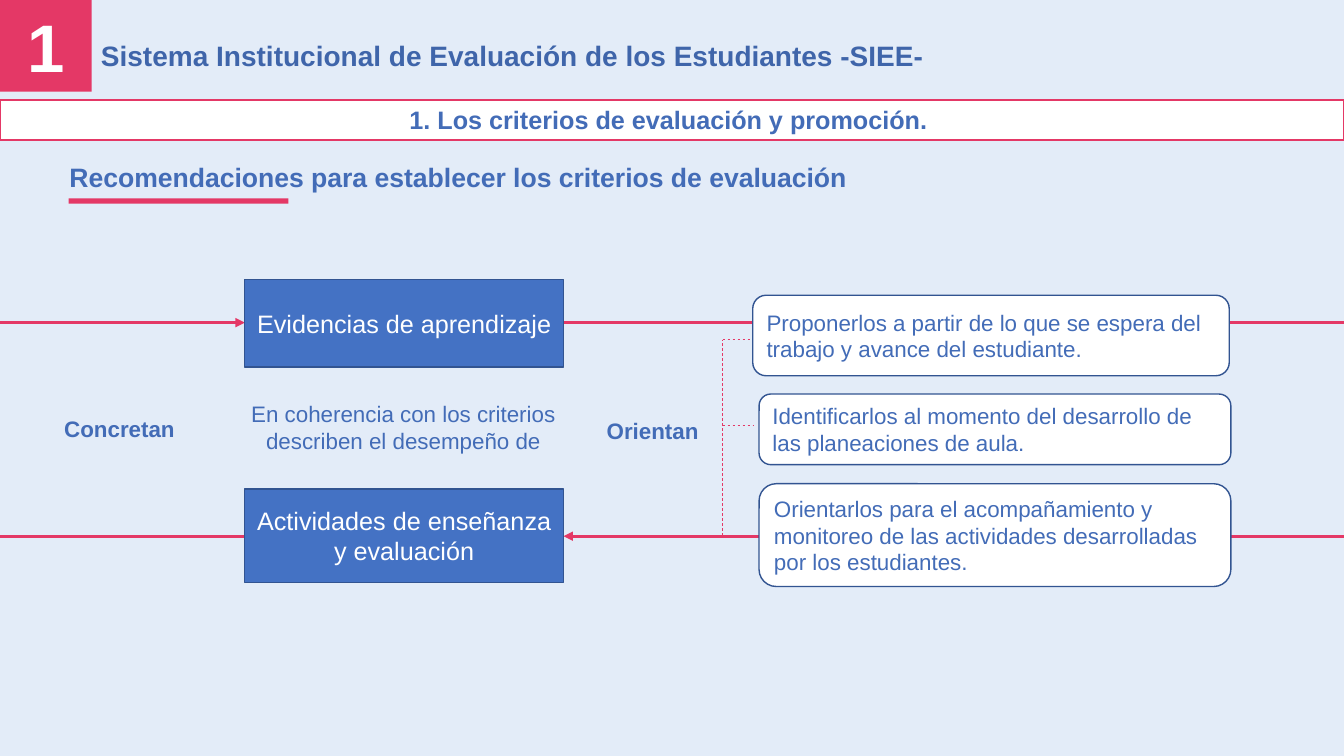
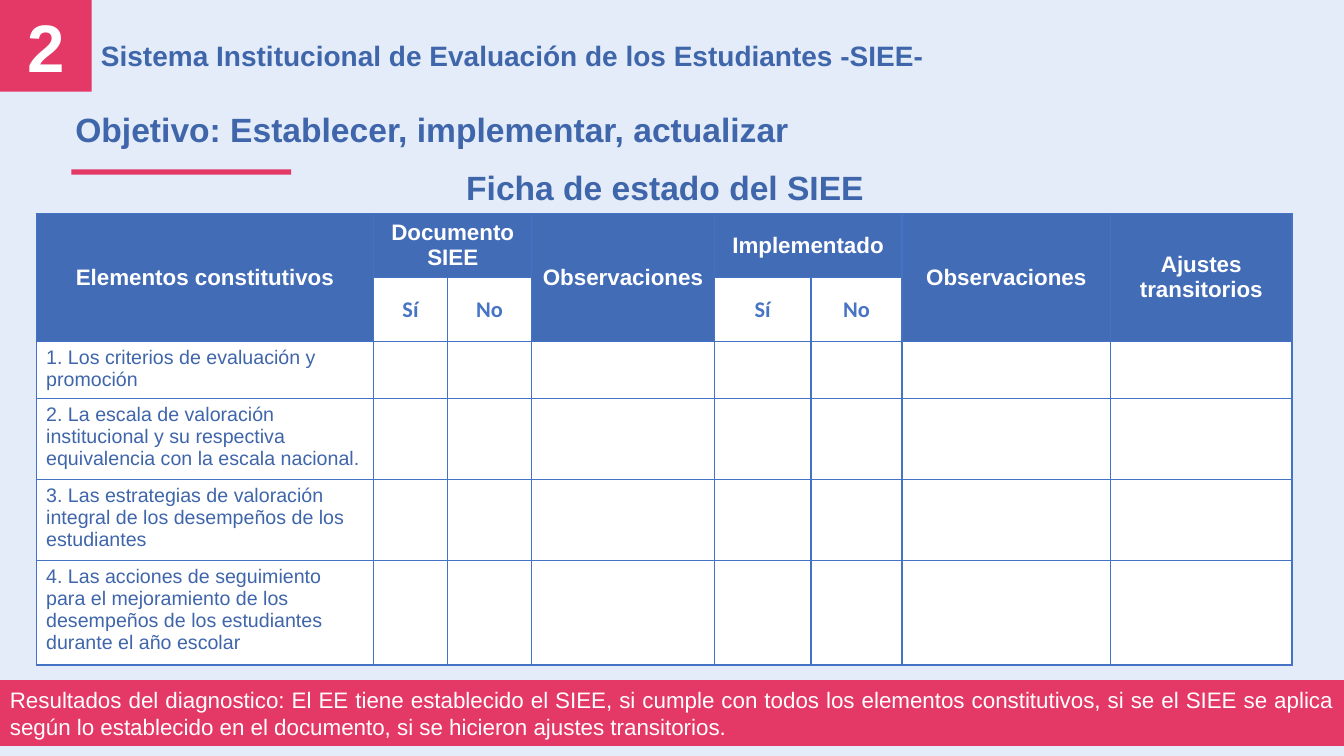
from lxml import etree
from pptx import Presentation
from pptx import util as u
from pptx.dml import color
from pptx.enum import dml, shapes, text
from pptx.oxml import ns

Cm = u.Cm
rgb = color.RGBColor.from_string
PINK, WHITE, SKY = "E43866", "FFFFFF", "E3ECF8"
BLUE, NAVY, TITLE, HEAD = "4472C4", "325491", "3F65AA", "436CB7"
LEFT, CENTER, JUSTIFY = text.PP_ALIGN.LEFT, text.PP_ALIGN.CENTER, text.PP_ALIGN.JUSTIFY
TOP, MIDDLE = text.MSO_ANCHOR.TOP, text.MSO_ANCHOR.MIDDLE
RECT, ROUND = shapes.MSO_SHAPE.RECTANGLE, shapes.MSO_SHAPE.ROUNDED_RECTANGLE
WIDTH, HEIGHT = 33.87, 19.05


def write(tf, lines, size, ink, bold=False, align=LEFT, font="Arial"):
    tf.word_wrap = True
    for i, line in enumerate(lines.split("\n")):
        p = tf.paragraphs[0] if i == 0 else tf.add_paragraph()
        p.alignment = align
        r = p.add_run()
        r.text = line
        r.font.name, r.font.size, r.font.bold = font, u.Pt(size), bold
        r.font.color.rgb = rgb(ink)


def add_block(s, box, kind=None, fill=None, line=None, weight=1, anchor=MIDDLE):
    box = [Cm(v) for v in box]
    if kind is None:
        sp = s.shapes.add_textbox(*box)
        sp.text_frame.vertical_anchor = TOP
        return sp.text_frame
    sp = s.shapes.add_shape(kind, *box)
    sp.shadow.inherit = False
    sp.fill.solid()
    sp.fill.fore_color.rgb = rgb(fill)
    if line:
        sp.line.color.rgb = rgb(line)
        sp.line.width = u.Pt(weight)
    else:
        sp.line.fill.background()
    sp.text_frame.vertical_anchor = anchor
    return sp.text_frame


prs = Presentation()
prs.slide_width, prs.slide_height = Cm(WIDTH), Cm(HEIGHT)
bg = prs.slide_master.background.fill
bg.solid()
bg.fore_color.rgb = rgb(SKY)

slides = []
for number, rule_x, rule_y in [("1", 1.73, 5), ("2", 1.8, 4.27)]:
    s = prs.slides.add_slide(prs.slide_layouts[5])
    title = s.shapes.title
    title.left, title.top, title.width, title.height = Cm(2.29), Cm(0.84), Cm(31.24), Cm(1.12)
    title.text_frame.auto_size = text.MSO_AUTO_SIZE.NONE
    title.text_frame.vertical_anchor = MIDDLE
    write(title.text_frame, "Sistema Institucional de Evaluación de los Estudiantes -SIEE-", 20, TITLE, True)
    write(add_block(s, (0, 0, 2.31, 2.31), RECT, PINK), number, 48, WHITE, True, CENTER)
    add_block(s, (rule_x, rule_y, 5.54, 0.13), RECT, PINK)
    slides.append(s)

s = slides[0]
tf = add_block(s, (0, 2.51, WIDTH, 1.02), RECT, WHITE, PINK, 1.5)
write(tf, "1. Los criterios de evaluación y promoción. ", 18, HEAD, True, CENTER)
tf = add_block(s, (1.5, 3.94, 20.4, 1.07))
write(tf, "Recomendaciones para establecer los criterios de evaluación", 19, HEAD, True)

upper, lower, trunk = 8.13, 13.51, 18.21
flows = [
    (0, upper, 6.17, upper, "arrow"),
    (6.17, lower, 0, lower, "plain"),
    (14.2, upper, WIDTH, upper, "plain"),
    (WIDTH, lower, 14.2, lower, "arrow"),
    (trunk, lower, trunk, 8.56, "dash"),
]
flows += [(trunk, y, 18.97, y, "dash") for y in (8.56, 10.72, lower)]
for x1, y1, x2, y2, style in flows:
    cn = s.shapes.add_connector(shapes.MSO_CONNECTOR.STRAIGHT, Cm(x1), Cm(y1), Cm(x2), Cm(y2))
    cn.line.color.rgb = rgb(PINK)
    cn.line.width = u.Pt(0.5 if style == "dash" else 2.25)
    if style == "dash":
        cn.line.dash_style = dml.MSO_LINE.DASH
    if style == "arrow":
        etree.SubElement(cn.line._get_or_add_ln(), ns.qn("a:tailEnd"), type="triangle")
    etree.SubElement(cn._element.spPr, ns.qn("a:effectLst"))

for top, height, words in [
    (7.04, 2.21, "Evidencias de aprendizaje"),
    (12.32, 2.36, "Actividades de enseñanza y evaluación"),
]:
    tf = add_block(s, (6.17, top, 8.03, height), RECT, BLUE, NAVY)
    write(tf, words, 18, WHITE, align=CENTER)

for box, words, bold, align in [
    ((5.87, 9.96, 8.59, 1.63), "En coherencia con los criterios\ndescriben el desempeño de", False, CENTER),
    ((15.04, 10.39, 4.19, 0.94), "Orientan", True, LEFT),
    ((1.37, 10.34, 4.27, 0.94), "Concretan", True, LEFT),
]:
    write(add_block(s, box), words, 16, HEAD, bold, align)

for box, words in [
    ((18.97, 7.44, 12.01, 2.03), "Proponerlos a partir de lo que se espera del trabajo y avance del estudiante."),
    ((19.13, 9.93, 11.89, 1.78), "Identificarlos al momento del desarrollo de las planeaciones de aula."),
    ((19.13, 12.19, 11.89, 2.59),
     "Orientarlos para el acompañamiento y monitoreo de las actividades desarrolladas por los estudiantes."),
]:
    write(add_block(s, box, ROUND, WHITE, NAVY), words, 16, HEAD)

s = slides[1]
tf = add_block(s, (1.65, 2.62, 18.67, 1.27))
write(tf, "Objetivo: Establecer, implementar, actualizar", 24, TITLE, True)
tf = add_block(s, (11.5, 4.09, 10.9, 1.27))
write(tf, "Ficha de estado del SIEE", 24, TITLE, True)

widths = [8.51, 1.85, 2.13, 4.6, 2.44, 2.29, 5.26, 4.57]
heights = [1.61, 1.61, 1.45, 2.03, 2.03, 2.64]
headers = {
    0: "Elementos constitutivos",
    1: "Documento SIEE",
    3: "Observaciones",
    4: "Implementado",
    6: "Observaciones",
    7: "Ajustes\ntransitorios",
}
answers = {1: "Sí", 2: "No", 4: "Sí", 5: "No"}
elements = [
    "1. Los criterios de evaluación y promoción",
    "2. La escala de valoración institucional y su respectiva equivalencia con la escala nacional.",
    "3. Las estrategias de valoración integral de los desempeños de los estudiantes",
    "4. Las acciones de seguimiento para el mejoramiento de los desempeños de los estudiantes durante el año escolar",
]
tbl = s.shapes.add_table(len(heights), len(widths), Cm(0.91), Cm(5.38), Cm(sum(widths)), Cm(sum(heights))).table
tbl.horz_banding = False
for col, width in zip(tbl.columns, widths):
    col.width = Cm(width)
for row, height in zip(tbl.rows, heights):
    row.height = Cm(height)

for i, row in enumerate(tbl.rows):
    for j, cell in enumerate(row.cells):
        tcPr = cell._tc.get_or_add_tcPr()
        for side in ("lnL", "lnR", "lnT", "lnB"):
            ln = etree.SubElement(tcPr, ns.qn("a:" + side), w=str(u.Pt(1)))
            solid = etree.SubElement(ln, ns.qn("a:solidFill"))
            etree.SubElement(solid, ns.qn("a:srgbClr"), val=BLUE)
        heading = i == 0 or (i == 1 and j not in answers)
        cell.fill.solid()
        cell.fill.fore_color.rgb = rgb(HEAD if heading else WHITE)
        cell.vertical_anchor = MIDDLE if i < 2 else TOP

for j, words in headers.items():
    cell = tbl.cell(0, j)
    cell.merge(tbl.cell(0, j + 1) if j in answers else tbl.cell(1, j))
    write(cell.text_frame, words, 16, WHITE, True, CENTER)
for j, words in answers.items():
    write(tbl.cell(1, j).text_frame, words, 16, "4874C5", True, CENTER, "Calibri")
for i, words in enumerate(elements, 2):
    write(tbl.cell(i, 0).text_frame, words, 14, TITLE)

tf = add_block(s, (0, 17.15, WIDTH, 1.63), RECT, PINK, PINK, 1.5)
write(tf, "Resultados del diagnostico: El EE tiene establecido el SIEE, si cumple con todos los elementos "
      "constitutivos, si se el SIEE se aplica según lo establecido en el documento, si se hicieron ajustes "
      "transitorios.", 16, WHITE, align=JUSTIFY)

prs.save("out.pptx")
